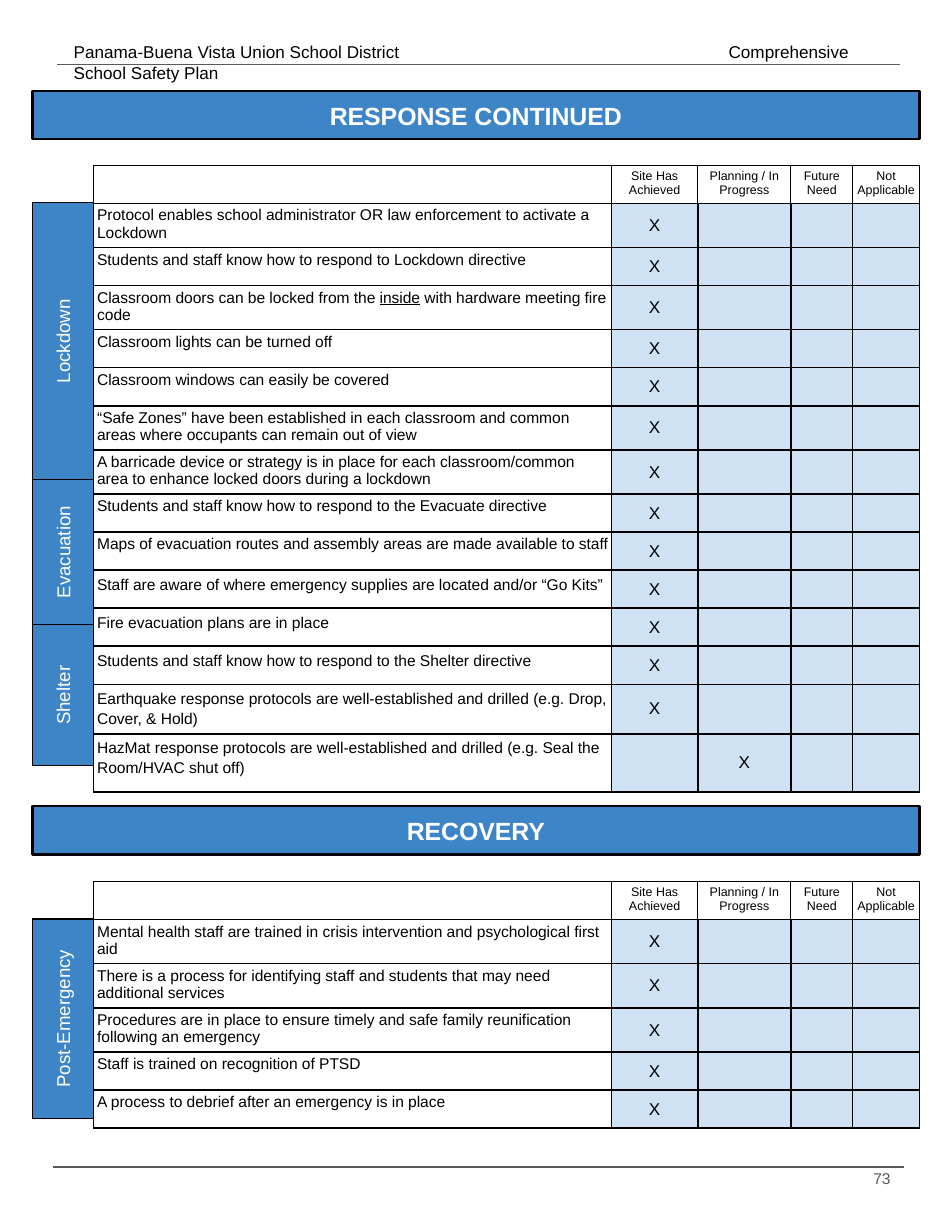
from lxml.etree import SubElement
from pptx import Presentation
from pptx.dml.color import RGBColor
from pptx.enum.shapes import MSO_CONNECTOR, MSO_SHAPE
from pptx.enum.text import MSO_ANCHOR, PP_ALIGN
from pptx.oxml import parse_xml
from pptx.oxml.ns import nsdecls, qn
from pptx.util import Pt

BLACK = RGBColor(0x00, 0x00, 0x00)
WHITE = RGBColor(0xFF, 0xFF, 0xFF)
GREY = RGBColor(0x59, 0x59, 0x59)
BLUE = RGBColor(0x3D, 0x85, 0xC6)
PALE = RGBColor(0xCF, 0xE2, 0xF3)

COLS = [332.8, 55.6, 59.8, 39.8, 42.9]
HEADS = ["", "Site Has Achieved", "Planning / In Progress", "Future Need", "Not Applicable"]
ONE, TWO = 24.45, 26.7

RESPONSE = [
    ("Protocol enables school administrator OR law enforcement to activate a Lockdown", TWO, 1, 1),
    ("Students and staff know how to respond to Lockdown directive", ONE, 1, 1),
    ("Classroom doors can be locked from the |inside| with hardware meeting fire code", TWO, 1, 1),
    ("Classroom lights can be turned off", ONE, 1, 1),
    ("Classroom windows can easily be covered", ONE, 1, 1),
    ("“Safe Zones” have been established in each classroom and common areas where occupants can remain out of view", TWO, 1, 1),
    ("A barricade device or strategy is in place for each classroom/common area to enhance locked doors during a lockdown", TWO, 1, 1),
    ("Students and staff know how to respond to the Evacuate directive", ONE, 1, 1),
    ("Maps of evacuation routes and assembly areas are made available to staff", ONE, 1, 1),
    ("Staff are aware of where emergency supplies are located and/or “Go Kits”", ONE, 1.15, 1),
    ("Fire evacuation plans are in place", ONE, 1.15, 1),
    ("Students and staff know how to respond to the Shelter directive", ONE, 1.15, 1),
    ("Earthquake response protocols are well-established and drilled (e.g. Drop, Cover, & Hold)", 29.9, 1.15, 1),
    ("HazMat response protocols are well-established and drilled (e.g. Seal the Room/HVAC shut off)", 37.5, 1.15, 2),
]
RECOVERY = [
    ("Mental health staff are trained in crisis intervention and psychological first aid", TWO, 1, 1),
    ("There is a process for identifying staff and students that may need additional services", TWO, 1, 1),
    ("Procedures are in place to ensure timely and safe family reunification following an emergency", TWO, 1, 1),
    ("Staff is trained on recognition of PTSD", ONE, 1, 1),
    ("A process to debrief after an emergency is in place", ONE, 1, 1),
]


def add_text(p, text, size, color, align=PP_ALIGN.LEFT, bold=False):
    p.alignment = align
    for i, part in enumerate(text.split("|")):
        r = p.add_run()
        r.text = part
        f = r.font
        f.name, f.size, f.bold = "Arial", Pt(size), bold
        f.color.rgb = color
        if i % 2:
            f.underline = True


def add_box(x, y, w, h, text, size, line, bold=False, rotation=0):
    sp = s.shapes.add_shape(MSO_SHAPE.RECTANGLE, Pt(x), Pt(y), Pt(w), Pt(h))
    sp.shadow.inherit = False
    sp.rotation = rotation
    sp.fill.solid()
    sp.fill.fore_color.rgb = BLUE
    sp.line.color.rgb = BLACK
    sp.line.width = Pt(line)
    tf = sp.text_frame
    tf.word_wrap = True
    tf.vertical_anchor = MSO_ANCHOR.MIDDLE
    tf.margin_left = tf.margin_right = tf.margin_top = tf.margin_bottom = Pt(7.2)
    add_text(tf.paragraphs[0], text, size, WHITE, PP_ALIGN.CENTER, bold)


prs = Presentation()
prs.slide_width, prs.slide_height = Pt(612), Pt(792)
s = prs.slides.add_slide(prs.slide_layouts[6])

for x, y, w, h, text, size, color, align in [
    (40.3, 19.4, 542.9, 28.1, "Panama-Buena Vista Union School District\tComprehensive School Safety Plan",
     11, BLACK, PP_ALIGN.LEFT),
    (542.9, 745.2, 36.7, 33.1, "73", 10, GREY, PP_ALIGN.RIGHT),
]:
    tf = s.shapes.add_textbox(Pt(x), Pt(y), Pt(w), Pt(h)).text_frame
    tf.word_wrap = True
    tf.margin_left = tf.margin_right = tf.margin_top = tf.margin_bottom = Pt(7.2)
    p = tf.paragraphs[0]
    add_text(p, text, size, color, align)
    if "\t" in text:
        tabs = SubElement(p._p.get_or_add_pPr(), qn("a:tabLst"))
        SubElement(tabs, qn("a:tab"), pos=str(Pt(421)), algn="l")

for x1, x2, y in [(36.7, 578.9, 41.6), (33.8, 581, 750.2)]:
    c = s.shapes.add_connector(MSO_CONNECTOR.STRAIGHT, Pt(x1), Pt(y), Pt(x2), Pt(y))
    c.line.color.rgb = GREY
    c.line.width = Pt(0.75)
    SubElement(c._element.spPr, qn("a:effectLst"))

for title, title_y, table_y, items in [
    ("RESPONSE CONTINUED", 58.5, 106.4, RESPONSE),
    ("RECOVERY", 518.3, 566.8, RECOVERY),
]:
    add_box(20.9, title_y, 570.2, 31, title, 16, 1.5, bold=True)
    heights = [ONE] + [item[1] for item in items]
    gf = s.shapes.add_table(len(heights), len(COLS), Pt(60.3), Pt(table_y), Pt(sum(COLS)), Pt(sum(heights)))
    table = gf.table
    table.first_row = table.horz_banding = False
    for col, w in zip(table.columns, COLS):
        col.width = Pt(w)
    for row, h in zip(table.rows, heights):
        row.height = Pt(h)
    for i in range(len(heights)):
        for j in range(len(COLS)):
            cell = table.cell(i, j)
            cell.margin_left = cell.margin_right = cell.margin_top = cell.margin_bottom = Pt(2.16)
            p = cell.text_frame.paragraphs[0]
            if i and j:
                cell.fill.solid()
                cell.fill.fore_color.rgb = PALE
                cell.vertical_anchor = MSO_ANCHOR.MIDDLE
            else:
                cell.fill.background()
            if i and j == 0:
                add_text(p, items[i - 1][0], 10, BLACK)
                p.line_spacing = float(items[i - 1][2])
            elif i and j == items[i - 1][3]:
                add_text(p, "X", 11, BLACK, PP_ALIGN.CENTER)
            elif i == 0 and j:
                add_text(p, HEADS[j], 8, BLACK, PP_ALIGN.CENTER)
            else:
                SubElement(p._p, qn("a:endParaRPr"), sz="1000")
            tcPr = cell._tc.get_or_add_tcPr()
            for k, side in enumerate("LRTB"):
                width = Pt(1 if i or side == "B" else 0.75)
                tcPr.insert(k, parse_xml(
                    f'<a:ln{side} {nsdecls("a")} w="{width}"><a:solidFill>'
                    f'<a:srgbClr val="{BLACK}"/></a:solidFill></a:ln{side}>'))

for label, top, length in [
    ("Lockdown", 130.2, 178.3),
    ("Evacuation", 308.2, 93.4),
    ("Shelter", 401.6, 90.7),
    ("Post-Emergency", 590.7, 128.3),
]:
    add_box(40.4 - length / 2, top + length / 2 - 19.5, length, 39, label, 12, 0.75, rotation=270)

prs.save("out.pptx")
